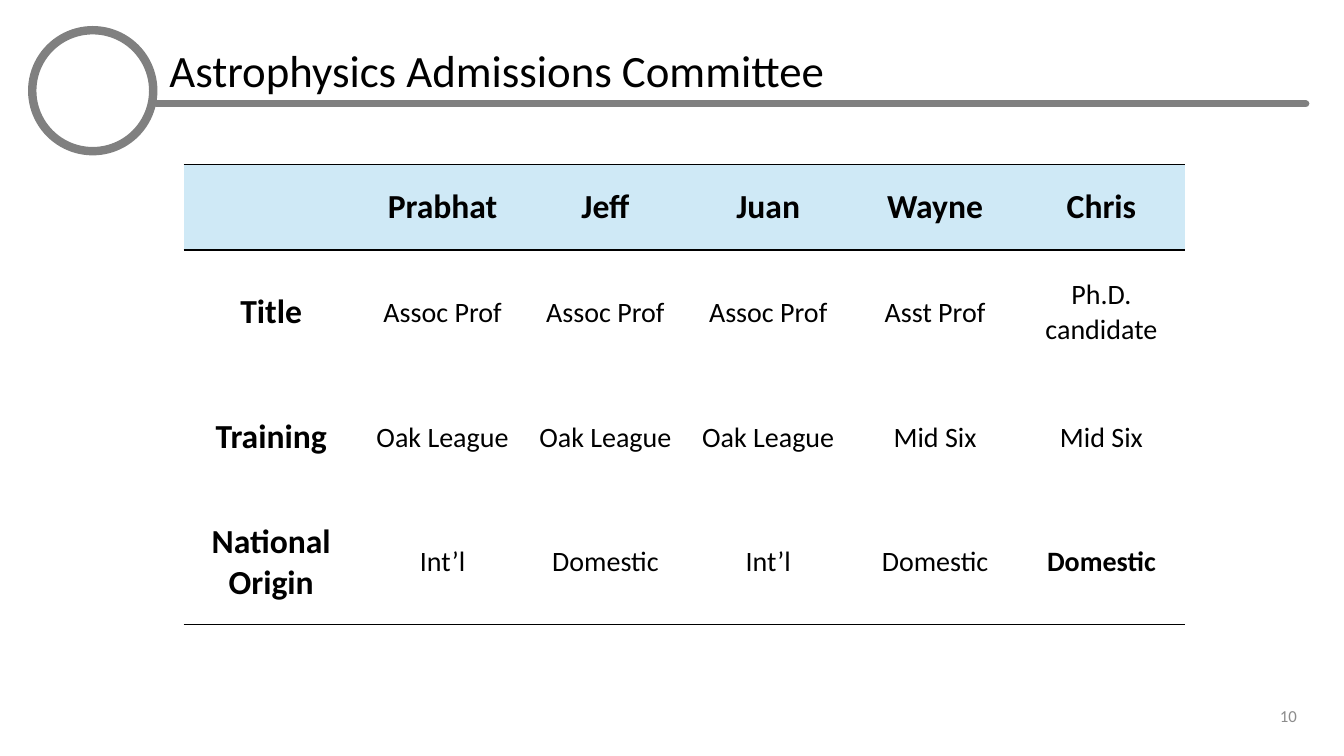
from dataclasses import dataclass

from lxml import etree
from pptx import Presentation
from pptx.dml.color import RGBColor
from pptx.enum import shapes, text
from pptx.oxml import ns
from pptx.util import Inches, Pt

FONT = "Calibri"
BLACK = RGBColor(0x00, 0x00, 0x00)
WHITE = RGBColor(0xFF, 0xFF, 0xFF)
GRAY = RGBColor(0x80, 0x80, 0x80)
NUMBER_GRAY = RGBColor(0x8C, 0x8C, 0x8C)
HEADER_BLUE = RGBColor(0xCF, 0xE9, 0xF6)
NO_STYLE = "{2D5ABB26-0587-4C30-8999-92F81FD0307C}"
COLUMN_WIDTHS = [1.74, 1.66, 1.57, 1.66, 1.65, 1.65]
ROW_HEIGHTS = [0.85, 1.24, 1.24, 1.24]


@dataclass
class Row:
    label: str
    values: list[str]


@dataclass
class Style:
    size: float
    color: RGBColor = BLACK
    bold: bool = False
    align: text.PP_ALIGN = text.PP_ALIGN.CENTER


ROWS = [
    Row("", ["Prabhat", "Jeff", "Juan", "Wayne", "Chris"]),
    Row("Title", ["Assoc Prof", "Assoc Prof", "Assoc Prof", "Asst Prof", "Ph.D. candidate"]),
    Row("Training", ["Oak League", "Oak League", "Oak League", "Mid Six", "Mid Six"]),
    Row("National Origin", ["Int’l", "Domestic", "Int’l", "Domestic", "Domestic"]),
]
HEADING = Style(24, bold=True)
BODY = Style(20)
EMPHASIS = Style(20, bold=True)
LAST_ROW = len(ROWS) - 1
LAST_CELL = (LAST_ROW, len(COLUMN_WIDTHS) - 1)


def write(tf, content: str, style: Style) -> None:
    tf.text = content
    p = tf.paragraphs[0]
    p.alignment = style.align
    for r in p.runs:
        r.font.name = FONT
        r.font.size = Pt(style.size)
        r.font.bold = style.bold
        r.font.color.rgb = style.color


def set_borders(cell, top: bool, bottom: bool) -> None:
    tc_pr = cell._tc.get_or_add_tcPr()
    for position, (side, visible) in enumerate([("lnT", top), ("lnB", bottom)]):
        ln = etree.Element(ns.qn(f"a:{side}"), w=str(Pt(1)))
        if visible:
            fill = etree.SubElement(ln, ns.qn("a:solidFill"))
            etree.SubElement(fill, ns.qn("a:srgbClr"), val=str(BLACK))
        else:
            etree.SubElement(ln, ns.qn("a:noFill"))
        tc_pr.insert(position, ln)


def add_frame(s) -> None:
    sp = s.shapes.add_shape(
        shapes.MSO_SHAPE.OVAL, Inches(0.32), Inches(0.3), Inches(1.2), Inches(1.2))
    sp.shadow.inherit = False
    sp.fill.background()
    sp.line.color.rgb = GRAY
    sp.line.width = Pt(6)

    rule = s.shapes.add_connector(
        shapes.MSO_CONNECTOR.STRAIGHT, Inches(1.55), Inches(1.03), Inches(12.95), Inches(1.03))
    rule.line.color.rgb = GRAY
    rule.line.width = Pt(5.25)
    rule.line._get_or_add_ln().set("cap", "rnd")
    etree.SubElement(rule._element.spPr, ns.qn("a:effectLst"))


def add_title(s) -> None:
    title = s.shapes.title
    title.left, title.top = Inches(1.58), Inches(0.43)
    title.width, title.height = Inches(10.17), Inches(0.54)
    tf = title.text_frame
    write(tf, "Astrophysics Admissions Committee", Style(32, align=text.PP_ALIGN.LEFT))
    tf.auto_size = text.MSO_AUTO_SIZE.NONE
    tf.vertical_anchor = text.MSO_ANCHOR.TOP
    tf.paragraphs[0].line_spacing = 0.9


def add_page_number(s) -> None:
    box = s.shapes.add_textbox(Inches(9.42), Inches(6.95), Inches(3.54), Inches(0.4))
    tf = box.text_frame
    tf.word_wrap = True
    tf.vertical_anchor = text.MSO_ANCHOR.TOP
    write(tf, "10", Style(12, NUMBER_GRAY, align=text.PP_ALIGN.RIGHT))


def add_committee_table(s) -> None:
    frame = s.shapes.add_table(
        len(ROWS), len(COLUMN_WIDTHS), Inches(1.82), Inches(1.63),
        Inches(sum(COLUMN_WIDTHS)), Inches(sum(ROW_HEIGHTS)))
    table = frame.table
    table._tbl.tblPr.find(ns.qn("a:tableStyleId")).text = NO_STYLE
    table.horz_banding = False
    for column, width in zip(table.columns, COLUMN_WIDTHS):
        column.width = Inches(width)
    for row, height in zip(table.rows, ROW_HEIGHTS):
        row.height = Inches(height)
    for i, row in enumerate(ROWS):
        for j, content in enumerate([row.label, *row.values]):
            cell = table.cell(i, j)
            cell.fill.solid()
            cell.fill.fore_color.rgb = HEADER_BLUE if i == 0 else WHITE
            cell.vertical_anchor = text.MSO_ANCHOR.MIDDLE
            if i == 0 or j == 0:
                style = HEADING
            else:
                style = EMPHASIS if (i, j) == LAST_CELL else BODY
            write(cell.text_frame, content, style)
            set_borders(cell, top=i in (0, 1), bottom=i in (0, LAST_ROW))


def main() -> None:
    prs = Presentation()
    prs.slide_width, prs.slide_height = Inches(13.33), Inches(7.5)
    s = prs.slides.add_slide(prs.slide_layouts[5])
    add_frame(s)
    add_page_number(s)
    add_title(s)
    add_committee_table(s)
    prs.save("out.pptx")


if __name__ == "__main__":
    main()
